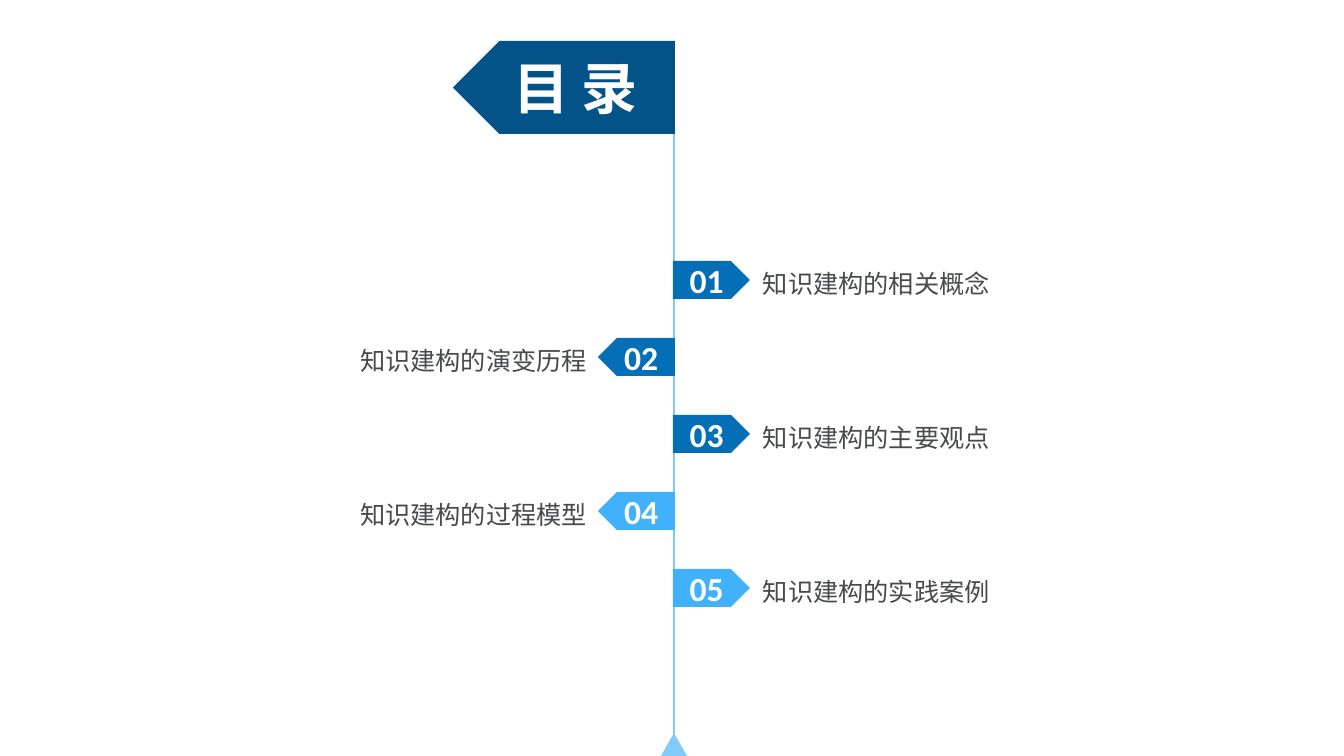
import dataclasses

import pptx
import pptx.dml.color
import pptx.enum.shapes
import pptx.enum.text
import pptx.oxml
import pptx.oxml.ns
import pptx.shapes.autoshape
import pptx.slide
import pptx.text.text
import pptx.util

RGBColor = pptx.dml.color.RGBColor
Shape = pptx.enum.shapes.MSO_SHAPE
Align = pptx.enum.text.PP_ALIGN

SLIDE_WIDTH, SLIDE_HEIGHT = 1344, 756
EMU_PER_PX = pptx.util.Inches(40 / 3) / SLIDE_WIDTH

WHITE = RGBColor(0xFF, 0xFF, 0xFF)
NAVY = RGBColor(0x03, 0x53, 0x88)
BLUE = RGBColor(0x04, 0x6F, 0xB6)
SKY = RGBColor(0x41, 0xB1, 0xFB)
PALE = RGBColor(0x80, 0xCB, 0xFC)
GREY = RGBColor(0x47, 0x49, 0x4B)

NUMBER_FONT = "Calibri"
CHINESE_FONT = "Noto Sans CJK SC"

AXIS_X = 674
BANNER_TOP = 41
FIRST_TAG_TOP, TAG_STEP = 261, 77
TAG_WIDTH, TAG_HEIGHT = 77, 38
LABEL_RISE, LABEL_HEIGHT = 16, 71


@dataclasses.dataclass(frozen=True)
class Box:
    left: int
    top: int
    width: int
    height: int

    def emu(self) -> tuple[int, int, int, int]:
        return px(self.left), px(self.top), px(self.width), px(self.height)


@dataclasses.dataclass(frozen=True)
class TextStyle:
    font: str
    size: int
    color: RGBColor
    bold: bool = False


@dataclasses.dataclass(frozen=True)
class Chapter:
    title: str
    color: RGBColor


BANNER_STYLE = TextStyle(CHINESE_FONT, 40, WHITE, True)
NUMBER_STYLE = TextStyle(NUMBER_FONT, 24, WHITE, True)
LABEL_STYLE = TextStyle(CHINESE_FONT, 18, GREY)

CHAPTERS = [
    Chapter("知识建构的相关概念", BLUE),
    Chapter("知识建构的演变历程", BLUE),
    Chapter("知识建构的主要观点", BLUE),
    Chapter("知识建构的过程模型", SKY),
    Chapter("知识建构的实践案例", SKY),
]


def px(length: int) -> int:
    return round(length * EMU_PER_PX)


def write_text(frame: pptx.text.text.TextFrame, text: str, style: TextStyle,
               align: Align, line_spacing: float = 1.0) -> None:
    frame.text = text
    frame.word_wrap = True
    frame.vertical_anchor = pptx.enum.text.MSO_ANCHOR.MIDDLE
    frame.margin_left = frame.margin_right = 0
    frame.margin_top = frame.margin_bottom = 0
    para = frame.paragraphs[0]
    para.alignment = align
    para.line_spacing = line_spacing
    span = para.runs[0]
    span.font.name = style.font
    span.font.size = pptx.util.Pt(style.size)
    span.font.bold = style.bold
    span.font.color.rgb = style.color
    # Chinese characters take the East Asian typeface
    east_asian = pptx.oxml.parse_xml(
        f'<a:ea {pptx.oxml.ns.nsdecls("a")} typeface="{style.font}"/>')
    span.font._element.find(pptx.oxml.ns.qn("a:latin")).addnext(east_asian)


def add_solid(page: pptx.slide.Slide, kind: Shape, box: Box,
              color: RGBColor) -> pptx.shapes.autoshape.Shape:
    shape = page.shapes.add_shape(kind, *box.emu())
    shape.shadow.inherit = False
    shape.fill.solid()
    shape.fill.fore_color.rgb = color
    shape.line.fill.background()
    return shape


def add_tag(page: pptx.slide.Slide, box: Box, color: RGBColor, text: str,
            style: TextStyle, points_left: bool) -> None:
    tag = add_solid(page, Shape.PENTAGON, box, color)
    if points_left:
        tag._element.spPr.xfrm.set("flipH", "1")
    write_text(tag.text_frame, text, style, Align.CENTER)


def add_axis(page: pptx.slide.Slide) -> None:
    axis = page.shapes.add_connector(
        pptx.enum.shapes.MSO_CONNECTOR.STRAIGHT,
        px(AXIS_X), px(BANNER_TOP), px(AXIS_X), px(SLIDE_HEIGHT))
    axis.line.color.rgb = PALE
    axis.line.width = pptx.util.Pt(2)
    axis._element.spPr.append(pptx.oxml.parse_xml(
        f'<a:effectLst {pptx.oxml.ns.nsdecls("a")}/>'))
    add_solid(page, Shape.ISOSCELES_TRIANGLE,
              Box(AXIS_X - 13, SLIDE_HEIGHT - 23, 26, 23), PALE)


def add_chapter(page: pptx.slide.Slide, index: int, chapter: Chapter) -> None:
    on_left = index % 2 == 1
    top = FIRST_TAG_TOP + index * TAG_STEP
    tag_left = AXIS_X + 1 - TAG_WIDTH if on_left else AXIS_X - 1
    add_tag(page, Box(tag_left, top, TAG_WIDTH, TAG_HEIGHT), chapter.color,
            f"{index + 1:02d}", NUMBER_STYLE, on_left)

    label_left, label_width = (263, 324) if on_left else (763, 327)
    label_box = Box(label_left, top - LABEL_RISE, label_width, LABEL_HEIGHT)
    label = page.shapes.add_textbox(*label_box.emu())
    write_text(label.text_frame, chapter.title, LABEL_STYLE,
               Align.RIGHT if on_left else Align.LEFT, 1.2)


def main() -> None:
    deck = pptx.Presentation()
    deck.slide_width, deck.slide_height = px(SLIDE_WIDTH), px(SLIDE_HEIGHT)
    page = deck.slides.add_slide(deck.slide_layouts[6])
    page.background.fill.solid()
    page.background.fill.fore_color.rgb = WHITE

    # Vertical axis with its foot
    add_axis(page)

    # Chapters alternate right and left of the axis
    for index, chapter in enumerate(CHAPTERS):
        add_chapter(page, index, chapter)

    # Title banner
    add_tag(page, Box(453, BANNER_TOP, 222, 93), NAVY, "目 录",
            BANNER_STYLE, True)

    deck.save("out.pptx")


if __name__ == "__main__":
    main()
